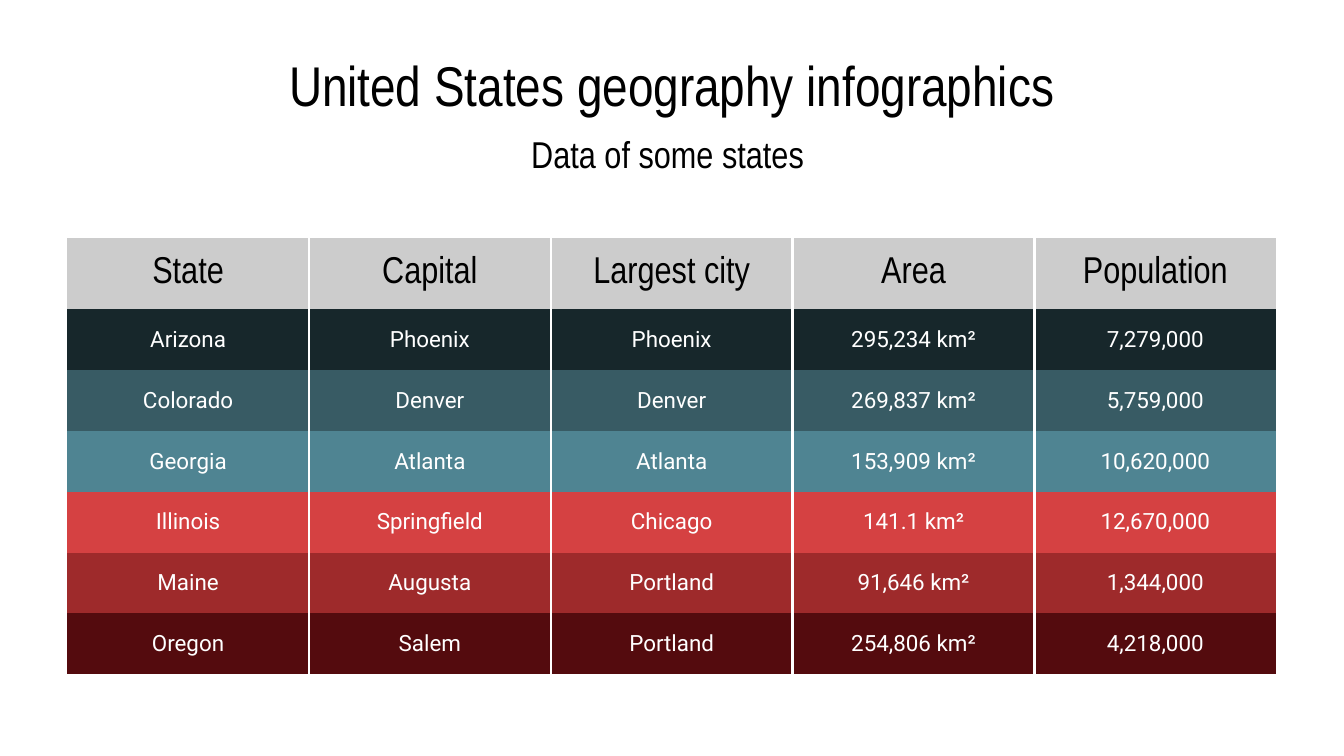
import pptx
import pptx.dml.color
import pptx.enum.text
import pptx.oxml
import pptx.oxml.ns
import pptx.util
from pptx.util import Cm

COLORS = {
    "black": "000000",
    "white": "FFFFFF",
    "header": "CCCCCC",
    "arizona": "17272B",
    "colorado": "385B64",
    "georgia": "4F8492",
    "illinois": "D54142",
    "maine": "9E2A2B",
    "oregon": "540B0E",
}
HEADINGS = ["State", "Capital", "Largest city", "Area", "Population"]
STATES = [
    ["Arizona", "Phoenix", "Phoenix", "295,234 km²", "7,279,000"],
    ["Colorado", "Denver", "Denver", "269,837 km²", "5,759,000"],
    ["Georgia", "Atlanta", "Atlanta", "153,909 km²", "10,620,000"],
    ["Illinois", "Springfield", "Chicago", "141.1 km²", "12,670,000"],
    ["Maine", "Augusta", "Portland", "91,646 km²", "1,344,000"],
    ["Oregon", "Salem", "Portland", "254,806 km²", "4,218,000"],
]
HEADING_FONT = "Arial Narrow"
BODY_FONT = "Roboto"
NO_GRID_STYLE = "{2D5ABB26-0587-4C30-8999-92F81FD0307C}"
MARGIN = Cm(0.25)
COLUMN_WIDTH = Cm(4.57)
HEADER_HEIGHT = Cm(1.23)
ROW_HEIGHT = Cm(1.15)


def rgb(name):
    return pptx.dml.color.RGBColor.from_string(COLORS[name])


def write_text(text_frame, text, font_name, size, color):
    text_frame.text = text
    paragraph = text_frame.paragraphs[0]
    paragraph.alignment = pptx.enum.text.PP_ALIGN.CENTER
    paragraph.font.name = font_name
    paragraph.font.size = pptx.util.Pt(size)
    paragraph.font.color.rgb = rgb(color)


def set_margins(holder):
    holder.margin_left = holder.margin_right = MARGIN
    holder.margin_top = holder.margin_bottom = MARGIN


def add_heading(slide, text, size, anchor, left, top, width, height):
    shape = slide.shapes.add_textbox(left, top, width, height)
    text_frame = shape.text_frame
    text_frame.word_wrap = True
    text_frame.vertical_anchor = anchor
    set_margins(text_frame)
    write_text(text_frame, text, HEADING_FONT, size, "black")


def add_border(cell, side):
    properties = cell._tc.get_or_add_tcPr()
    properties.append(pptx.oxml.parse_xml(
        f'<a:{side} {pptx.oxml.ns.nsdecls("a")} w="{pptx.util.Pt(1.5)}">'
        f'<a:solidFill><a:srgbClr val="{COLORS["white"]}"/></a:solidFill></a:{side}>'
    ))


def fill_row(table, row, values, fill, font_name, size, color):
    for column, value in enumerate(values):
        cell = table.cell(row, column)
        if column > 0:
            add_border(cell, "lnL")
        if column < len(values) - 1:
            add_border(cell, "lnR")
        cell.fill.solid()
        cell.fill.fore_color.rgb = rgb(fill)
        cell.vertical_anchor = pptx.enum.text.MSO_ANCHOR.MIDDLE
        set_margins(cell)
        write_text(cell.text_frame, value, font_name, size, color)


def add_state_table(slide):
    shape = slide.shapes.add_table(
        len(STATES) + 1, len(HEADINGS), Cm(1.27), Cm(4.5),
        COLUMN_WIDTH * len(HEADINGS), HEADER_HEIGHT + ROW_HEIGHT * len(STATES),
    )
    table = shape.table
    table.horz_banding = False
    table._tbl.tblPr.find(pptx.oxml.ns.qn("a:tableStyleId")).text = NO_GRID_STYLE
    for column in table.columns:
        column.width = COLUMN_WIDTH
    for row in table.rows:
        row.height = ROW_HEIGHT
    table.rows[0].height = HEADER_HEIGHT
    fill_row(table, 0, HEADINGS, "header", HEADING_FONT, 20, "black")
    for row, values in enumerate(STATES, start=1):
        fill_row(table, row, values, values[0].lower(), BODY_FONT, 12, "white")


def main():
    presentation = pptx.Presentation()
    presentation.slide_width = Cm(25.4)
    presentation.slide_height = Cm(14.29)
    slide = presentation.slides.add_slide(presentation.slide_layouts[6])
    anchors = pptx.enum.text.MSO_ANCHOR
    add_heading(slide, "United States geography infographics", 30, anchors.TOP,
                Cm(1.27), Cm(0.71), Cm(22.86), Cm(1.6))
    add_heading(slide, "Data of some states ", 20, anchors.MIDDLE,
                Cm(5.36), Cm(2.34), Cm(14.68), Cm(1.12))
    add_state_table(slide)
    presentation.save("out.pptx")


if __name__ == "__main__":
    main()
